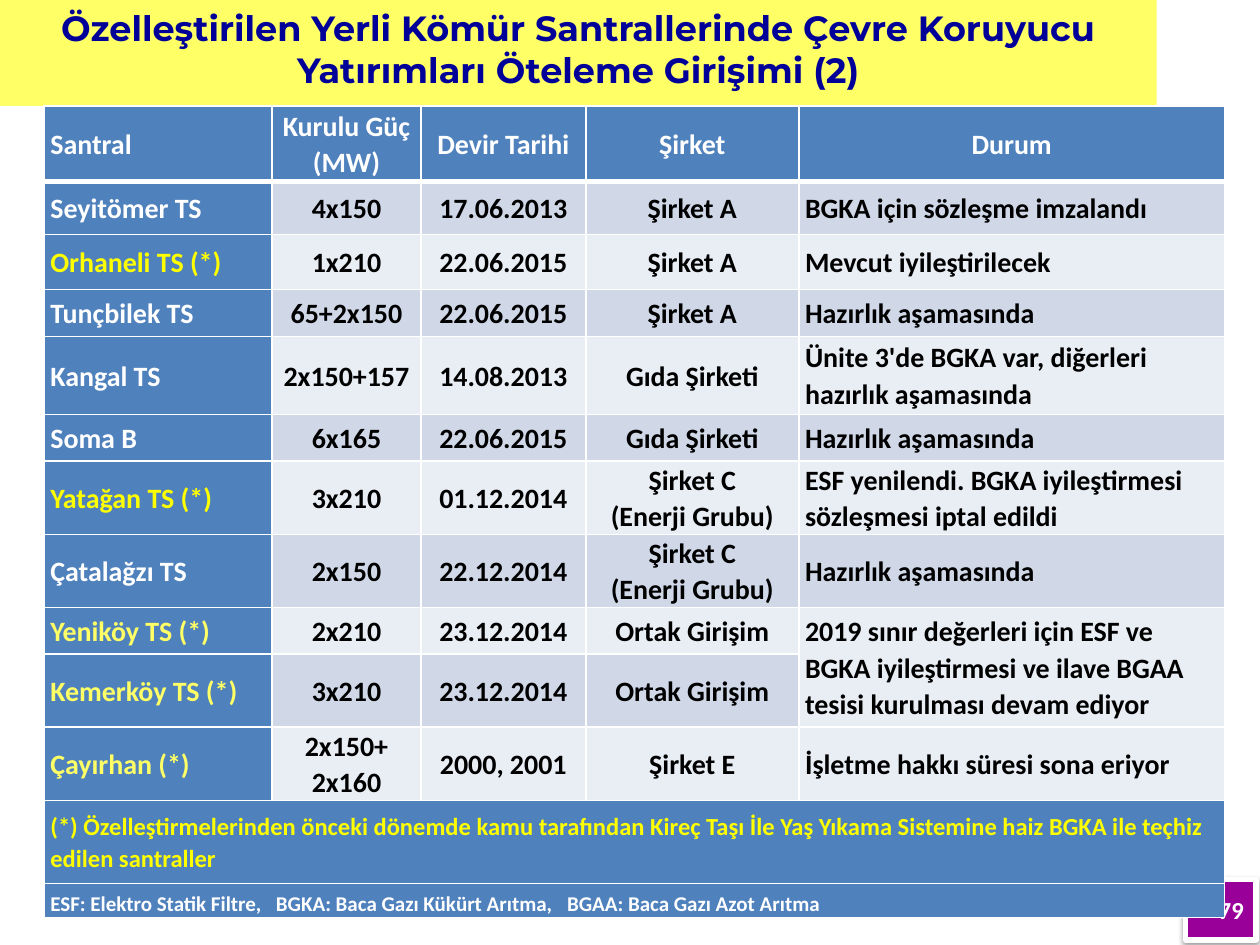
from typing import NamedTuple

from lxml.etree import SubElement
from pptx import Presentation
from pptx.dml.color import RGBColor
from pptx.enum.shapes import MSO_SHAPE
from pptx.enum.text import MSO_ANCHOR, PP_ALIGN
from pptx.oxml.ns import qn
from pptx.util import Inches, Pt

COLORS = {
    "white": "FFFFFF",
    "black": "000000",
    "navy": "000099",
    "purple": "990099",
    "blue": "4F81BD",
    "band_dark": "D0D8E8",
    "band_light": "E9EDF4",
    "yellow": "FFFF00",
    "pale_yellow": "FFFF66",
}
COLUMN_WIDTHS = [1.81, 1.18, 1.31, 1.69, 3.38]
HEADINGS = ["Santral", "Kurulu Güç (MW)", "Devir Tarihi", "Şirket", "Durum"]
HEADER_HEIGHT = 0.6
FOOTNOTE_HEIGHT = 0.66
LEGEND_HEIGHT = 0.27
FOOTNOTE = ("(*) Özelleştirmelerinden önceki dönemde kamu tarafından Kireç Taşı İle "
            "Yaş Yıkama Sistemine haiz BGKA ile teçhiz edilen santraller")
LEGEND = ("ESF: Elektro Statik Filtre,\tBGKA: Baca Gazı Kükürt Arıtma,"
          "\tBGAA: Baca Gazı Azot Arıtma")
LEGEND_TABS = [1.79, 4.1]


class Style(NamedTuple):
    color: str
    size: int = 16
    font: str = "Calibri"
    align: PP_ALIGN = PP_ALIGN.LEFT


class Plant(NamedTuple):
    height: float
    name_color: str
    name: str
    capacity: str
    transfer: str
    company: str
    status: str


PLANTS = [
    Plant(0.42, "white", "Seyitömer TS", "4x150", "17.06.2013", "Şirket A",
          "BGKA için sözleşme imzalandı"),
    Plant(0.44, "yellow", "Orhaneli TS (*)", "1x210", "22.06.2015", "Şirket A",
          "Mevcut iyileştirilecek"),
    Plant(0.37, "white", "Tunçbilek TS", "65+2x150", "22.06.2015", "Şirket A",
          "Hazırlık aşamasında"),
    Plant(0.62, "white", "Kangal TS", "2x150+157", "14.08.2013", "Gıda Şirketi",
          "Ünite 3'de BGKA var, diğerleri hazırlık aşamasında"),
    Plant(0.37, "white", "Soma B", "6x165", "22.06.2015", "Gıda Şirketi",
          "Hazırlık aşamasında"),
    Plant(0.58, "yellow", "Yatağan TS (*)", "3x210", "01.12.2014", "Şirket C\n(Enerji Grubu)",
          "ESF yenilendi. BGKA iyileştirmesi sözleşmesi iptal edildi"),
    Plant(0.56, "white", "Çatalağzı TS", "2x150", "22.12.2014", "Şirket C\n(Enerji Grubu)",
          "Hazırlık aşamasında"),
    Plant(0.37, "pale_yellow", "Yeniköy TS (*)", "2x210", "23.12.2014", "Ortak Girişim",
          "2019 sınır değerleri için ESF ve BGKA iyileştirmesi ve ilave BGAA "
          "tesisi kurulması devam ediyor"),
    Plant(0.58, "pale_yellow", "Kemerköy TS (*)", "3x210", "23.12.2014",
          "Ortak Girişim", ""),
    Plant(0.56, "pale_yellow", "Çayırhan (*)", "2x150+\n2x160", "2000, 2001", "Şirket E",
          "İşletme hakkı süresi sona eriyor"),
]


def rgb(color: str) -> RGBColor:
    return RGBColor.from_string(COLORS[color])


def write(frame, text: str, style: Style, spacing: float = 1.0) -> None:
    for index, line in enumerate(text.split("\n")):
        paragraph = frame.add_paragraph() if index else frame.paragraphs[0]
        paragraph.alignment = style.align
        paragraph.line_spacing = spacing
        run = paragraph.add_run()
        run.text = line
        run.font.name = style.font
        run.font.size = Pt(style.size)
        run.font.bold = True
        run.font.color.rgb = rgb(style.color)


def add_block(slide, left: float, top: float, width: float, height: float,
              fill: str, anchor: MSO_ANCHOR, text: str, style: Style):
    block = slide.shapes.add_shape(MSO_SHAPE.RECTANGLE, Inches(left), Inches(top),
                                   Inches(width), Inches(height))
    block.shadow.inherit = False
    block.fill.solid()
    block.fill.fore_color.rgb = rgb(fill)
    block.line.fill.background()
    block.text_frame.word_wrap = True
    block.text_frame.vertical_anchor = anchor
    write(block.text_frame, text, style)
    return block


def add_shadow(block) -> None:
    effects = block._element.spPr.find(qn("a:effectLst"))
    shadow = SubElement(effects, qn("a:outerShdw"), blurRad=str(Pt(3.1)),
                        dist=str(Pt(1.6)), dir="5400000", rotWithShape="0")
    tint = SubElement(shadow, qn("a:srgbClr"), val=COLORS["black"])
    SubElement(tint, qn("a:alpha"), val="38000")


def format_cell(cell, fill: str, top: int = 1, bottom: int = 1) -> None:
    properties = cell._tc.get_or_add_tcPr()
    for side, weight in (("L", 1), ("R", 1), ("T", top), ("B", bottom)):
        border = SubElement(properties, qn(f"a:ln{side}"), w=str(Pt(weight)))
        paint = SubElement(border, qn("a:solidFill"))
        SubElement(paint, qn("a:srgbClr"), val=COLORS["white"])
    cell.fill.solid()
    cell.fill.fore_color.rgb = rgb(fill)
    cell.margin_left = cell.margin_right = Inches(0.05)
    cell.margin_top = cell.margin_bottom = 0
    cell.vertical_anchor = MSO_ANCHOR.MIDDLE


def fill_header(table) -> None:
    for column, heading in enumerate(HEADINGS):
        cell = table.cell(0, column)
        format_cell(cell, "blue", bottom=3)
        align = PP_ALIGN.CENTER if column else PP_ALIGN.LEFT
        write(cell.text_frame, heading, Style("white", align=align), 1.07)


def fill_plant(table, row: int, plant: Plant) -> None:
    band = "band_dark" if row % 2 else "band_light"
    for column, text in enumerate(plant[2:]):
        cell = table.cell(row, column)
        format_cell(cell, band if column else "blue", top=3 if row == 1 else 1)
        align = PP_ALIGN.CENTER if 0 < column < 4 else PP_ALIGN.LEFT
        color = "black" if column else plant.name_color
        if text:
            write(cell.text_frame, text, Style(color, align=align), 1.07)
        else:
            table.cell(row - 1, column).merge(cell)


def fill_note(table, row: int, text: str, style: Style):
    last = len(COLUMN_WIDTHS) - 1
    for column in range(last + 1):
        format_cell(table.cell(row, column), "blue")
    note = table.cell(row, 0)
    note.merge(table.cell(row, last))
    write(note.text_frame, text, style, 1.07)
    return note


def add_plant_table(slide) -> None:
    heights = [HEADER_HEIGHT, *(plant.height for plant in PLANTS),
               FOOTNOTE_HEIGHT, LEGEND_HEIGHT]
    table = slide.shapes.add_table(
        len(heights), len(COLUMN_WIDTHS), Inches(0.35), Inches(0.84),
        Inches(sum(COLUMN_WIDTHS)), Inches(sum(heights))).table
    for column, width in zip(table.columns, COLUMN_WIDTHS):
        column.width = Inches(width)
    for row, height in zip(table.rows, heights):
        row.height = Inches(height)
    fill_header(table)
    for row, plant in enumerate(PLANTS, start=1):
        fill_plant(table, row, plant)
    footnote_row = len(PLANTS) + 1
    fill_note(table, footnote_row, FOOTNOTE, Style("yellow", 14))
    legend = fill_note(table, footnote_row + 1, LEGEND, Style("white", 12))
    legend.vertical_anchor = MSO_ANCHOR.BOTTOM
    tabs = SubElement(legend.text_frame.paragraphs[0]._p.get_or_add_pPr(), qn("a:tabLst"))
    for position in LEGEND_TABS:
        SubElement(tabs, qn("a:tab"), pos=str(Inches(position)), algn="l")


def main() -> None:
    deck = Presentation()
    deck.slide_width, deck.slide_height = Inches(10), Inches(7.5)
    slide = deck.slides.add_slide(deck.slide_layouts[6])
    add_block(slide, 0, 0, 9.18, 0.84, "pale_yellow", MSO_ANCHOR.TOP,
              "Özelleştirilen Yerli Kömür Santrallerinde Çevre Koruyucu "
              "Yatırımları Öteleme Girişimi (2)",
              Style("navy", 20, "Montserrat", PP_ALIGN.CENTER))
    page_number = add_block(slide, 9.41, 6.98, 0.56, 0.48, "purple", MSO_ANCHOR.MIDDLE,
                            "79", Style("white", 14, align=PP_ALIGN.RIGHT))
    page_number.line.color.rgb = rgb("white")
    page_number.line.width = Pt(3)
    add_shadow(page_number)
    add_plant_table(slide)
    deck.save("out.pptx")


if __name__ == "__main__":
    main()
